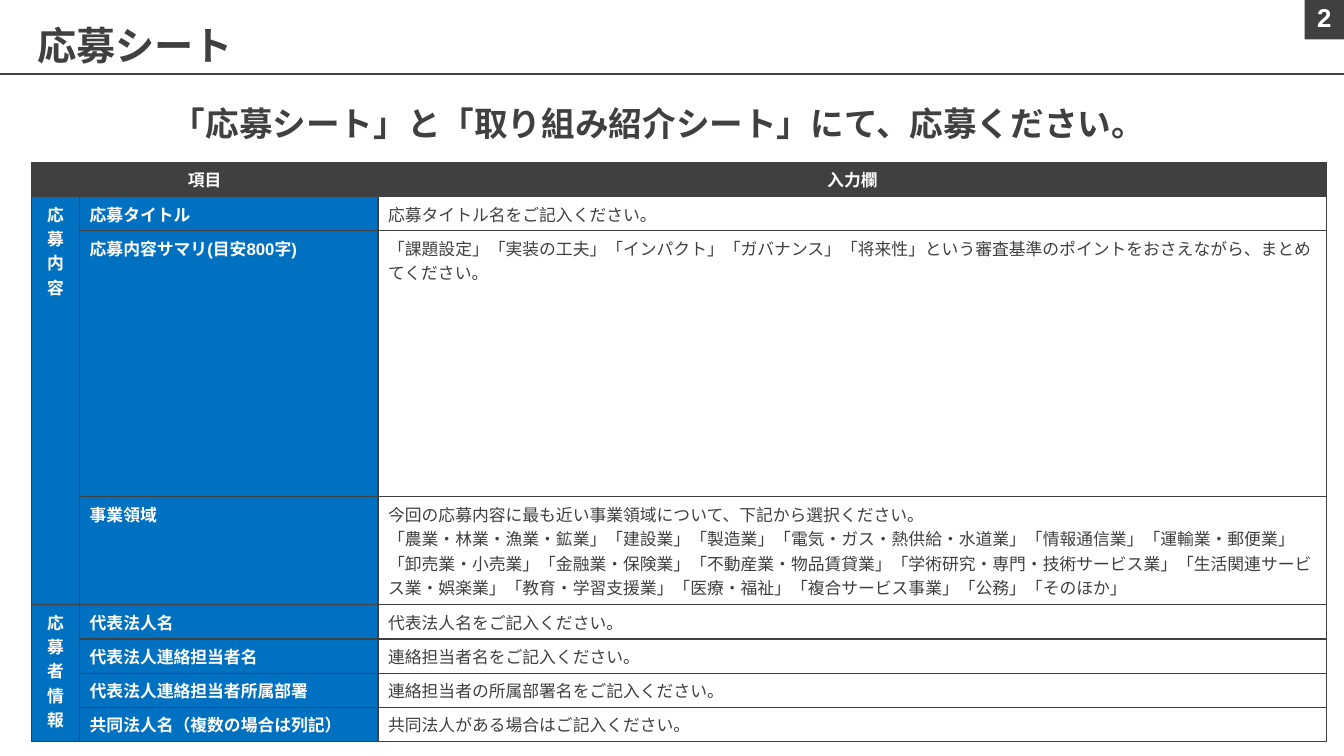
from lxml import etree
from pptx import Presentation
from pptx.dml.color import RGBColor
from pptx.enum.shapes import MSO_CONNECTOR as CONNECTOR, MSO_SHAPE as SHAPE
from pptx.enum.text import MSO_ANCHOR as ANCHOR, PP_ALIGN as ALIGN
from pptx.oxml import parse_xml
from pptx.oxml.ns import nsdecls, qn
from pptx.util import Inches, Pt

DARK, BLUE, WHITE = "404040", "0070C0", "FFFFFF"

COLUMN_WIDTHS = [0.48, 2.96, 9.41]
ROW_HEIGHT = 0.34
TALL_ROWS = {2: 2.64, 3: 1.07}
HEADER = ["項目", None, "入力欄"]

# Each section: side label, then (item, input guidance paragraphs)
SECTIONS = [
    ("応募内容", [
        ("応募タイトル", ["応募タイトル名をご記入ください。"]),
        ("応募内容サマリ(目安800字)", [
            "「課題設定」「実装の工夫」「インパクト」「ガバナンス」「将来性」という審査基準の"
            "ポイントをおさえながら、まとめてください。"]),
        ("事業領域", [
            "今回の応募内容に最も近い事業領域について、下記から選択ください。",
            "「農業・林業・漁業・鉱業」「建設業」「製造業」「電気・ガス・熱供給・水道業」"
            "「情報通信業」「運輸業・郵便業」「卸売業・小売業」「金融業・保険業」"
            "「不動産業・物品賃貸業」「学術研究・専門・技術サービス業」"
            "「生活関連サービス業・娯楽業」「教育・学習支援業」「医療・福祉」"
            "「複合サービス事業」「公務」「そのほか」"]),
    ]),
    ("応募者情報", [
        ("代表法人名", ["代表法人名をご記入ください。"]),
        ("代表法人連絡担当者名", ["連絡担当者名をご記入ください。"]),
        ("代表法人連絡担当者所属部署", ["連絡担当者の所属部署名をご記入ください。"]),
        ("共同法人名（複数の場合は列記）", ["共同法人がある場合はご記入ください。"]),
    ]),
]


def color(value):
    return RGBColor.from_string(value)


class SlideBuilder:
    font = "Arial"

    def __init__(self, slide):
        self.slide = slide

    def add_paragraphs(self, frame, texts, size, text_color, bold=True,
                       align=ALIGN.LEFT, line_spacing=None):
        for index, text in enumerate(texts):
            paragraph = frame.add_paragraph() if index else frame.paragraphs[0]
            paragraph.alignment = align
            if line_spacing:
                paragraph.line_spacing = line_spacing
            run = paragraph.add_run()
            run.text = text
            run.font.name = self.font
            run.font.size = Pt(size)
            run.font.bold = bold
            run.font.color.rgb = color(text_color)

    def text(self, left, top, width, height, text, size, text_color=DARK,
             align=ALIGN.LEFT, anchor=ANCHOR.MIDDLE, inset=0.08, line_spacing=1.1):
        box = self.slide.shapes.add_textbox(
            Inches(left), Inches(top), Inches(width), Inches(height))
        frame = box.text_frame
        frame.word_wrap = True
        frame.vertical_anchor = anchor
        frame.margin_left = frame.margin_right = 0
        frame.margin_top = frame.margin_bottom = Inches(inset)
        self.add_paragraphs(frame, [text], size, text_color, align=align,
                            line_spacing=line_spacing)

    def rectangle(self, left, top, width, height, fill):
        shape = self.slide.shapes.add_shape(
            SHAPE.RECTANGLE, Inches(left), Inches(top), Inches(width), Inches(height))
        shape.shadow.inherit = False
        shape.fill.solid()
        shape.fill.fore_color.rgb = color(fill)
        shape.line.fill.background()

    def rule(self, left, top, right, width):
        line = self.slide.shapes.add_connector(
            CONNECTOR.STRAIGHT, Inches(left), Inches(top), Inches(right), Inches(top))
        line.line.color.rgb = color(DARK)
        line.line.width = Pt(width)
        etree.SubElement(line._element.spPr, qn("a:effectLst"))

    def table(self, left, top, widths, heights):
        table = self.slide.shapes.add_table(
            len(heights), len(widths), Inches(left), Inches(top),
            Inches(sum(widths)), Inches(sum(heights))).table
        for column, width in zip(table.columns, widths):
            column.width = Inches(width)
        for row, height in zip(table.rows, heights):
            row.height = Inches(height)
        return table

    def cell(self, cell, texts, fill, text_color=WHITE, bold=True, align=ALIGN.LEFT):
        cell.fill.solid()
        cell.fill.fore_color.rgb = color(fill)
        properties = cell._tc.get_or_add_tcPr()
        for index, side in enumerate(("lnL", "lnR", "lnT", "lnB")):
            properties.insert(index, parse_xml(
                f'<a:{side} {nsdecls("a")} w="{Pt(1)}"><a:solidFill>'
                f'<a:srgbClr val="{DARK}"/></a:solidFill></a:{side}>'))
        self.add_paragraphs(cell.text_frame, texts, 12, text_color, bold, align)


def main():
    presentation = Presentation()
    presentation.slide_width = Inches(13.33)
    presentation.slide_height = Inches(7.5)
    builder = SlideBuilder(presentation.slides.add_slide(presentation.slide_layouts[6]))

    # Title bar and page number
    builder.rule(0, 0.73, 13.33, 1.5)
    builder.rectangle(12.94, 0, 0.39, 0.39, DARK)
    builder.text(12.91, 0.02, 0.45, 0.35, "2", 18.4, WHITE, ALIGN.CENTER,
                 ANCHOR.TOP, inset=0, line_spacing=None)
    builder.text(0.37, 0.13, 12.6, 0.59, "応募シート", 28)

    # Entry form
    row_count = 1 + sum(len(items) for _, items in SECTIONS)
    heights = [TALL_ROWS.get(row, ROW_HEIGHT) for row in range(row_count)]
    table = builder.table(0.31, 1.61, COLUMN_WIDTHS, heights)
    for column, heading in enumerate(HEADER):
        builder.cell(table.cell(0, column), [heading] if heading else [], DARK,
                     align=ALIGN.CENTER)
    table.cell(0, 0).merge(table.cell(0, 1))

    row = 1
    for label, items in SECTIONS:
        first = row
        for item, guidance in items:
            builder.cell(table.cell(row, 0), [label] if row == first else [], BLUE,
                         align=ALIGN.CENTER)
            builder.cell(table.cell(row, 1), [item], BLUE)
            builder.cell(table.cell(row, 2), guidance, WHITE, DARK, bold=False)
            row += 1
        table.cell(first, 0).merge(table.cell(row - 1, 0))

    # Lead message
    builder.text(0.31, 1.03, 12.44, 0.34,
                 "「応募シート」と「取り組み紹介シート」にて、応募ください。", 24,
                 align=ALIGN.CENTER)

    presentation.save("out.pptx")


if __name__ == "__main__":
    main()
